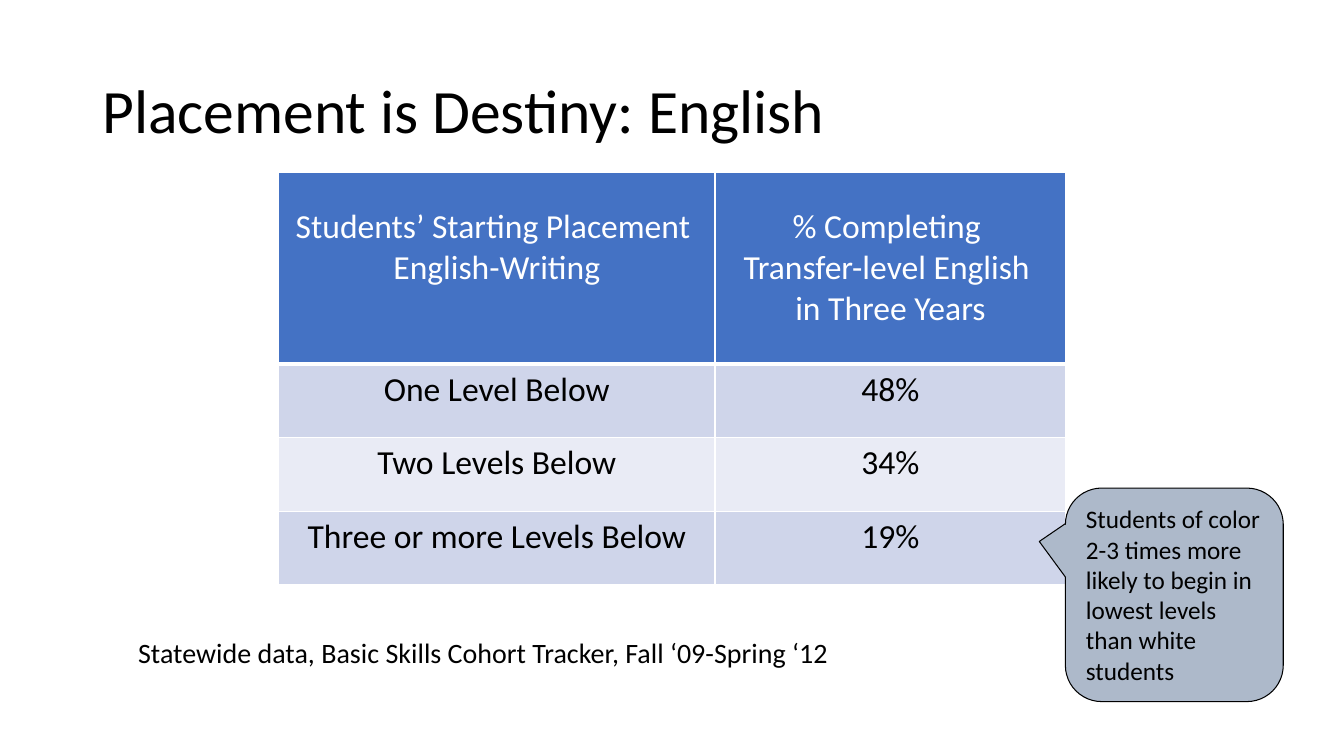
from lxml import etree
from pptx import Presentation, util as u
from pptx.dml.color import RGBColor
from pptx.enum import shapes, text
from pptx.oxml import ns

HEADER = ["Students’ Starting Placement \nEnglish-Writing",
          "% Completing \nTransfer-level English \nin Three Years"]
COMPLETION = [("One Level Below", "48%"),
              ("Two Levels Below", "34%"),
              ("Three or more Levels Below", "19%")]
BANDS = ["CFD5EA", "E9EBF5"]


def color(value):
    return RGBColor.from_string(value)


class SlideBuilder:
    font = "Calibri"
    black, white, blue, gray = "000000", "FFFFFF", "4472C4", "ADB9CA"

    def __init__(self, slide):
        self.slide = slide

    def fill_text(self, frame, content, size, ink=black, align=None):
        frame.text = content
        for paragraph in frame.paragraphs:
            paragraph.alignment = align
            for run in paragraph.runs:
                run.font.name = self.font
                run.font.size = u.Pt(size)
                run.font.color.rgb = color(ink)

    def label(self, box, content, size, anchor=text.MSO_ANCHOR.TOP):
        frame = self.slide.shapes.add_textbox(*map(u.Cm, box)).text_frame
        frame.word_wrap = True
        frame.vertical_anchor = anchor
        self.fill_text(frame, content, size)
        return frame

    def borders(self, cell, bottom):
        properties = cell._tc.get_or_add_tcPr()
        for side, width in (("L", 1), ("R", 1), ("T", 1), ("B", bottom)):
            line = etree.SubElement(properties, ns.qn(f"a:ln{side}"), w=str(u.Pt(width)))
            fill = etree.SubElement(line, ns.qn("a:solidFill"))
            etree.SubElement(fill, ns.qn("a:srgbClr"), val=self.white)

    def cell(self, cell, content, fill, ink, bottom=1):
        self.borders(cell, bottom)
        cell.fill.solid()
        cell.fill.fore_color.rgb = color(fill)
        self.fill_text(cell.text_frame, content, 24, ink, text.PP_ALIGN.CENTER)

    def table(self, box, widths, heights, header, rows):
        frame = self.slide.shapes.add_table(len(rows) + 1, len(header), *map(u.Cm, box))
        table = frame.table
        table.first_row = table.horz_banding = False
        for column, width in zip(table.columns, widths):
            column.width = u.Cm(width)
        for row, height in zip(table.rows, heights):
            row.height = u.Cm(height)
        for c, content in enumerate(header):
            self.cell(table.cell(0, c), content, self.blue, self.white, bottom=3)
            table.cell(0, c).vertical_anchor = text.MSO_ANCHOR.MIDDLE
        for r, row in enumerate(rows):
            for c, content in enumerate(row):
                self.cell(table.cell(r + 1, c), content, BANDS[r % 2], self.black)
        return table

    def callout(self, box, adjustments, content, size):
        shape = self.slide.shapes.add_shape(
            shapes.MSO_SHAPE.ROUNDED_RECTANGULAR_CALLOUT, *map(u.Cm, box))
        shape.shadow.inherit = False
        for i, value in enumerate(adjustments):
            shape.adjustments[i] = value
        shape.fill.solid()
        shape.fill.fore_color.rgb = color(self.gray)
        shape.line.color.rgb = color(self.black)
        shape.line.width = u.Pt(0.75)
        shape.text_frame.word_wrap = True
        shape.text_frame.vertical_anchor = text.MSO_ANCHOR.TOP
        self.fill_text(shape.text_frame, content, size, align=text.PP_ALIGN.LEFT)


def main():
    presentation = Presentation()
    presentation.slide_width, presentation.slide_height = u.Cm(33.87), u.Cm(19.05)
    builder = SlideBuilder(presentation.slides.add_slide(presentation.slide_layouts[6]))

    # Title
    title = builder.label((2.33, 1.01, 29.21, 3.68), "Placement is Destiny: English",
                          44, text.MSO_ANCHOR.MIDDLE)
    title.paragraphs[0].line_spacing = 0.9

    # Completion table, with both headers starting on the same line
    table = builder.table((7.02, 4.35, 19.84, 10.38), (11, 8.84),
                          (4.83, 1.85, 1.85, 1.85), HEADER, COMPLETION)
    table.cell(0, 0).margin_bottom = u.Cm(1.16)

    # Callout on the lowest level
    builder.callout((26.85, 12.3, 5.49, 5.38), (-0.62, -0.25, 0.17),
                    "Students of color 2-3 times more likely to begin in "
                    "lowest levels than white students", 18)

    # Data source
    builder.label((3.23, 15.9, 19.08, 1.12),
                  "Statewide data, Basic Skills Cohort Tracker, Fall ‘09-Spring ‘12", 20)

    presentation.save("out.pptx")


if __name__ == "__main__":
    main()
